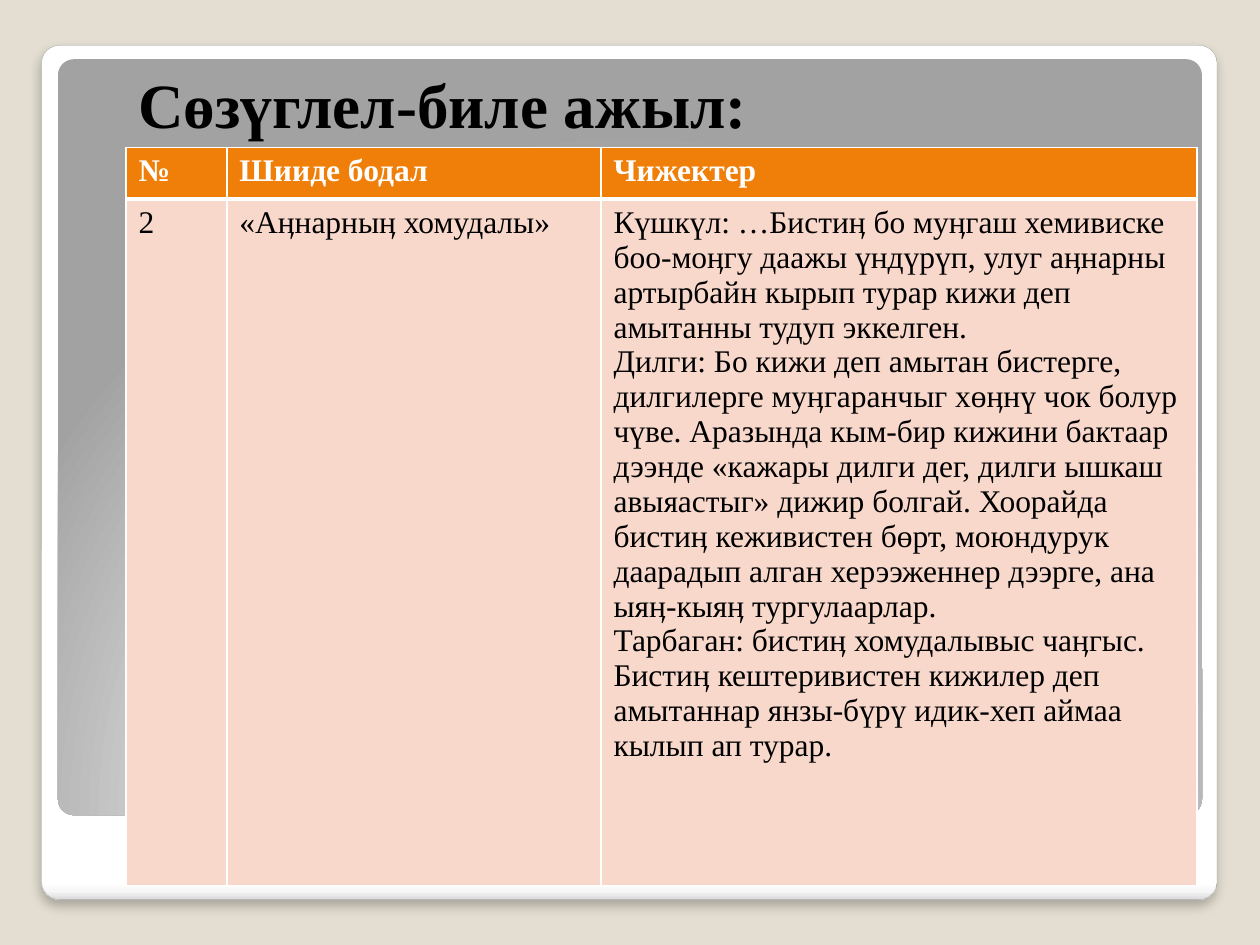
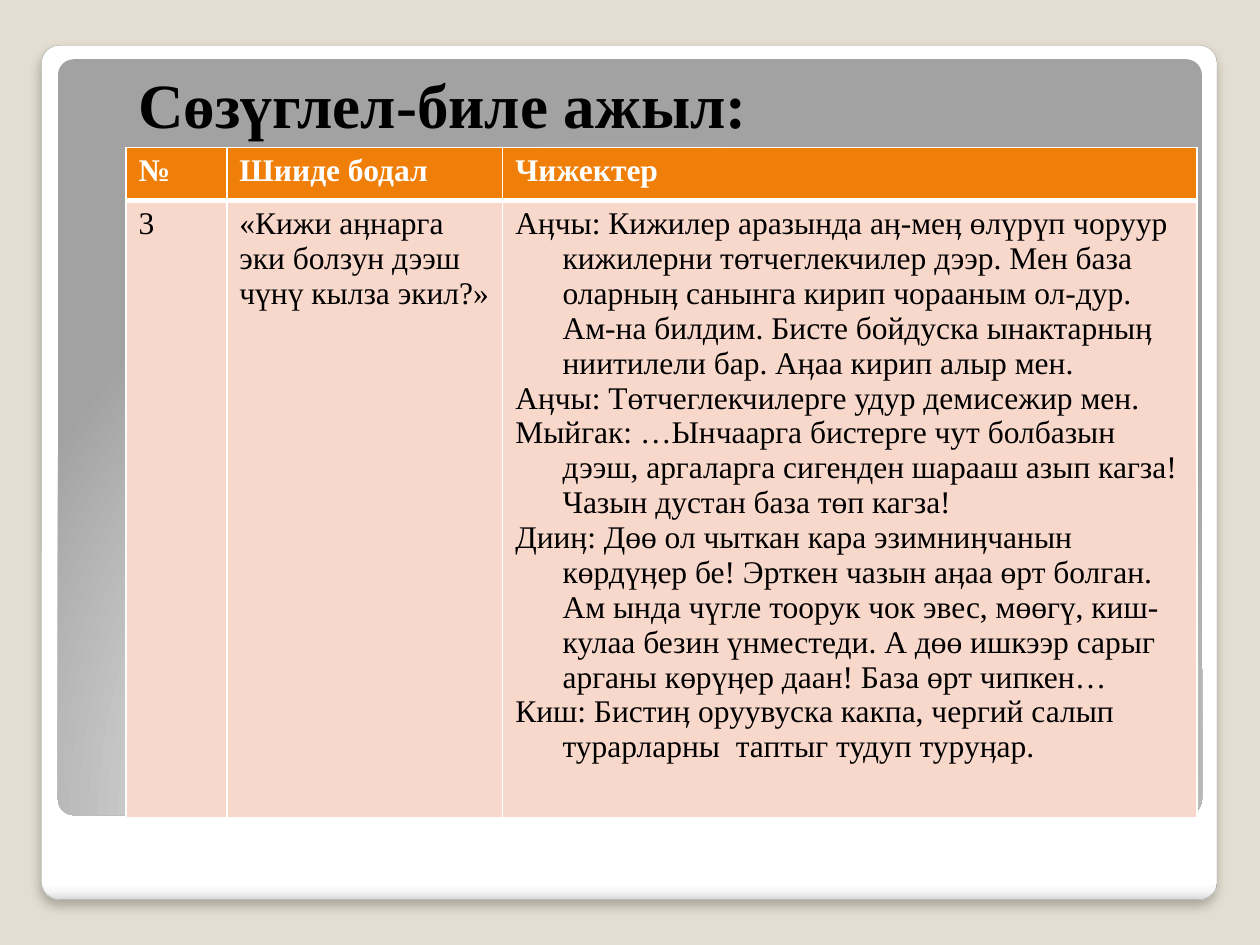
from lxml.etree import SubElement
from pptx import Presentation
from pptx.dml.color import RGBColor
from pptx.enum.shapes import MSO_SHAPE
from pptx.enum.text import MSO_ANCHOR
from pptx.oxml.ns import qn
from pptx.util import Inches, Pt

# Shared look: a grid of 100 columns by 75 rows, colours and type
COLUMNS, ROWS = 100, 75
CELL = Inches(0.1)
FONT = "Times New Roman"
COLORS = {
    "page": "E3DED1", "white": "FFFFFF", "outline": "A4A4A4", "shadow": "000000",
    "header": "F07F09", "body": "F9D8CC", "text": "000000",
}
CARD_STOPS = [(0, "FFFFFF"), (98, "FFFFFF"), (99, "F7F7F7"), (100, "DADADA")]
PANEL_STOPS = [(0, "FFFFFF"), (55, "E1E1E1"), (100, "A2A2A2")]

# Content
TITLE = "Сөзүглел-биле ажыл:"
HEADINGS = ["№", "Шииде бодал", "Чижектер"]
TOPICS = [
    {
        "number": "2",
        "idea": "«Аӊнарныӊ хомудалы»",
        "examples": [
            "Күшкүл: …Бистиӊ бо муӊгаш хемивиске боо-моӊгу даажы үндүрүп, улуг аӊнарны "
            "артырбайн кырып турар кижи деп амытанны тудуп эккелген.",
            "Дилги: Бо кижи деп амытан бистерге, дилгилерге муӊгаранчыг хөӊнү чок болур "
            "чүве. Аразында кым-бир кижини бактаар дээнде «кажары дилги дег, дилги ышкаш "
            "авыяастыг» дижир болгай. Хоорайда бистиӊ кеживистен бөрт, моюндурук даарадып "
            "алган херээженнер дээрге, ана ыяӊ-кыяӊ тургулаарлар.",
            "Тарбаган: бистиӊ хомудалывыс чаӊгыс. Бистиӊ кештеривистен кижилер деп "
            "амытаннар янзы-бүрү идик-хеп аймаа кылып ап турар.",
        ],
        "widths": [8, 29.7, 47.3], "heights": [4.1, 54.5], "hanging": 0,
    },
    {
        "number": "3",
        "idea": "«Кижи аӊнарга эки болзун дээш чүнү кылза экил?»",
        "examples": [
            "Аӊчы: Кижилер аразында аӊ-меӊ өлүрүп чоруур кижилерни төтчеглекчилер дээр. "
            "Мен база оларныӊ санынга кирип чорааным ол-дур. Ам-на билдим. Бисте бойдуска "
            "ынактарныӊ ниитилели бар. Аӊаа кирип алыр мен.",
            "Аӊчы: Төтчеглекчилерге удур демисежир мен.",
            "Мыйгак: …Ынчаарга бистерге чут болбазын дээш, аргаларга сигенден шарааш "
            "азып кагза! Чазын дустан база төп кагза!",
            "Дииӊ: Дөө ол чыткан кара эзимниӊчанын көрдүӊер бе! Эрткен чазын аӊаа өрт "
            "болган. Ам ында чүгле тоорук чок эвес, мөөгү, киш-кулаа безин үнместеди. "
            "А дөө ишкээр сарыг арганы көрүӊер даан! База өрт чипкен…",
            "Киш: Бистиӊ оруувуска какпа, чергий салып турарларны  таптыг тудуп туруӊар.",
        ],
        "widths": [8, 21.9, 55.1], "heights": [4.2, 45.3], "hanging": 3.75,
    },
]


def grid(*lengths):
    return [round(length * CELL) for length in lengths]


def rgb(name):
    return RGBColor.from_string(COLORS[name])


def child(parent, tag, **attributes):
    return SubElement(parent, qn(tag), {key: str(value) for key, value in attributes.items()})


def style_runs(paragraph, size, color, bold):
    for run in paragraph.runs:
        run.font.name = FONT
        run.font.size = Pt(size)
        run.font.bold = bold
        run.font.color.rgb = rgb(color)


def add_rounded_panel(slide, area, stops):
    """Add a rounded panel and return it with its empty gradient element."""
    panel = slide.shapes.add_shape(MSO_SHAPE.ROUNDED_RECTANGLE, *grid(*area))
    panel.adjustments[0] = 0.021
    panel.shadow.inherit = False
    panel.line.fill.background()
    properties = panel._element.spPr
    gradient = child(properties, "a:gradFill", rotWithShape=1)
    properties.find(qn("a:prstGeom")).addnext(gradient)
    stop_list = child(gradient, "a:gsLst")
    for position, color in stops:
        stop = child(stop_list, "a:gs", pos=position * 1000)
        child(stop, "a:srgbClr", val=color)
    return panel, gradient


def add_backdrop(slide):
    slide.background.fill.solid()
    slide.background.fill.fore_color.rgb = rgb("page")

    # White card with a soft shadow
    card, gradient = add_rounded_panel(slide, (3.3, 3.6, 93.3, 67.8), CARD_STOPS)
    child(gradient, "a:lin", ang=90 * 60000, scaled=0)
    card.line.color.rgb = rgb("outline")
    card.line.width = Pt(0.16)
    effects = card._element.spPr.find(qn("a:effectLst"))
    shadow = child(effects, "a:outerShdw", blurRad=Pt(6), dist=Pt(4),
                   dir=90 * 60000, algn="t", rotWithShape=0)
    shadow_color = child(shadow, "a:srgbClr", val=COLORS["shadow"])
    child(shadow_color, "a:alpha", val=25000)

    # Grey panel lit from below
    _, gradient = add_rounded_panel(slide, (4.6, 4.7, 90.8, 60), PANEL_STOPS)
    glow = child(gradient, "a:path", path="circle")
    child(glow, "a:fillToRect", l=50000, t=175000, r=50000, b=-75000)


def add_title(slide):
    title = slide.shapes.add_textbox(*grid(10, 3, 85, 8.7)).text_frame
    title.word_wrap = True
    title.vertical_anchor = MSO_ANCHOR.BOTTOM
    title.text = TITLE
    style_runs(title.paragraphs[0], 36, "text", True)


def set_borders(cell, **widths):
    properties = cell._tc.get_or_add_tcPr()
    for index, side in enumerate("LRTB"):
        border = child(properties, f"a:ln{side}", w=Pt(widths.get(side, 1)))
        fill = child(border, "a:solidFill")
        child(fill, "a:srgbClr", val=COLORS["white"])
        properties.insert(index, border)


def fill_cell(cell, lines, is_header, hanging=0):
    cell.text_frame.text = "\n".join(lines)
    for paragraph in cell.text_frame.paragraphs:
        style_runs(paragraph, 18, "white" if is_header else "text", is_header)
        if hanging:
            indent = grid(hanging)[0]
            properties = paragraph._p.get_or_add_pPr()
            properties.set("marL", str(indent))
            properties.set("indent", str(-indent))
    cell.fill.solid()
    cell.fill.fore_color.rgb = rgb("header" if is_header else "body")
    set_borders(cell, **({"B": 3} if is_header else {"T": 3}))


def add_examples_table(slide, topic):
    widths, heights = topic["widths"], topic["heights"]
    table = slide.shapes.add_table(
        len(heights), len(widths), *grid(10, 11.7, sum(widths), sum(heights))).table
    for column, width in zip(table.columns, grid(*widths)):
        column.width = width
    for row, height in zip(table.rows, grid(*heights)):
        row.height = height
    for index, heading in enumerate(HEADINGS):
        fill_cell(table.cell(0, index), [heading], True)
    fill_cell(table.cell(1, 0), [topic["number"]], False)
    fill_cell(table.cell(1, 1), [topic["idea"]], False)
    fill_cell(table.cell(1, 2), topic["examples"], False, topic["hanging"])


def main():
    presentation = Presentation()
    presentation.slide_width, presentation.slide_height = grid(COLUMNS, ROWS)
    blank = presentation.slide_layouts[6]
    for topic in TOPICS:
        slide = presentation.slides.add_slide(blank)
        add_backdrop(slide)
        add_title(slide)
        add_examples_table(slide, topic)
    presentation.save("out.pptx")


if __name__ == "__main__":
    main()
